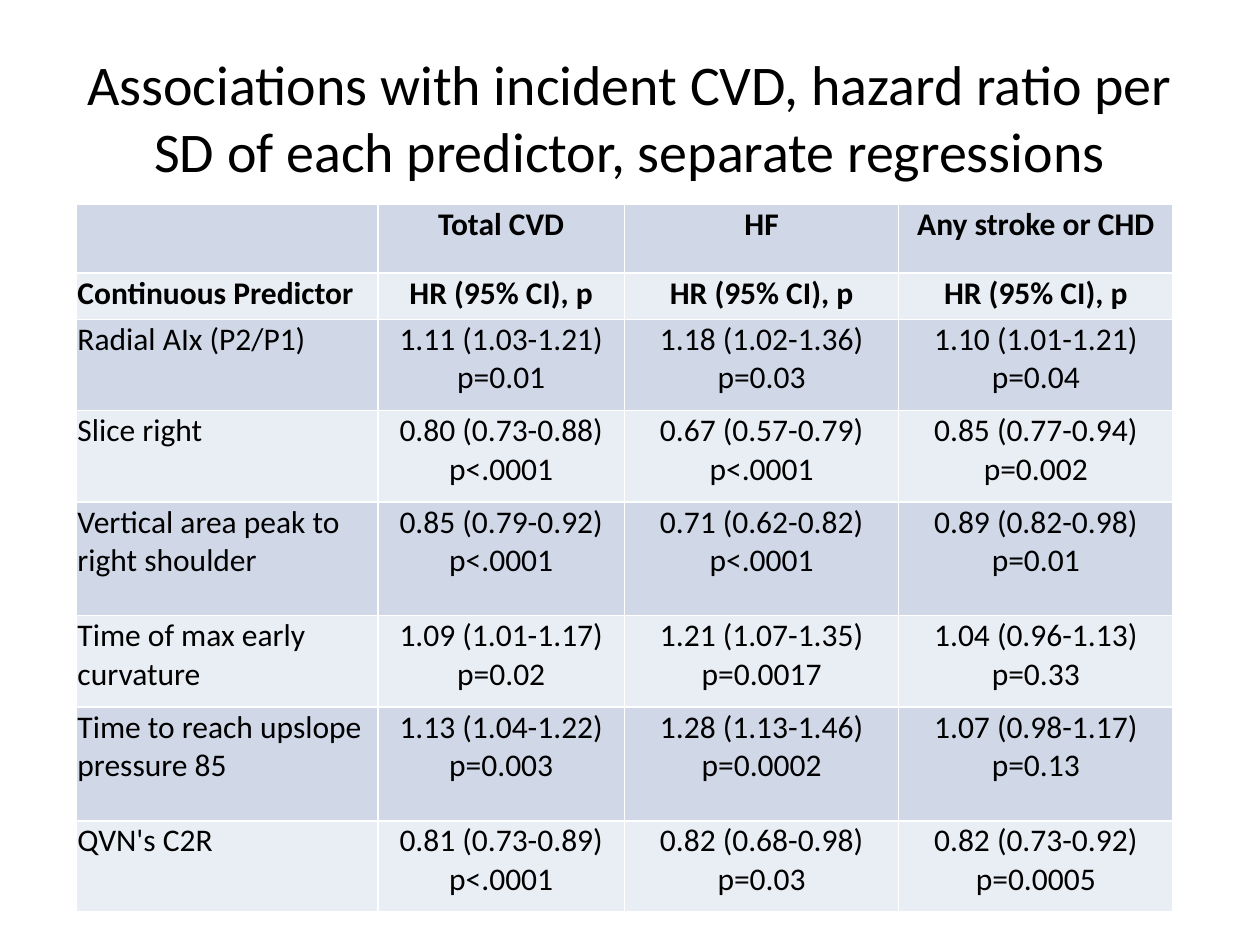
from lxml import etree
from pptx import Presentation
from pptx import util as u
from pptx.dml.color import RGBColor
from pptx.enum import text
from pptx.oxml import ns


def color(value):
    return RGBColor.from_string(value)


def write(frame, words, align, size, bold=False):
    frame.text = words
    for para in frame.paragraphs:
        para.alignment = align
        for span in para.runs:
            look = {"name": "Calibri", "size": u.Pt(size), "bold": bold}
            for key, value in look.items():
                setattr(span.font, key, value)
            span.font.color.rgb = color("000000")


deck = Presentation()
deck.slide_width, deck.slide_height = u.Pt(720), u.Pt(540)
page = deck.slides.add_slide(deck.slide_layouts[6])

title = page.shapes.add_textbox(u.Pt(36), u.Pt(21.6), u.Pt(648), u.Pt(90))
title.text_frame.word_wrap = True
title.text_frame.vertical_anchor = text.MSO_ANCHOR.MIDDLE
write(title.text_frame,
      "Associations with incident CVD, hazard ratio per SD of each predictor, separate regressions",
      text.PP_ALIGN.CENTER, 32)

measure = "HR (95% CI), p"
rows = [
    ["", "Total CVD", "HF", "Any stroke or CHD"],
    ["Continuous Predictor", measure, measure, measure],
    ["Radial AIx (P2/P1)", "1.11 (1.03-1.21)\np=0.01",
     "1.18 (1.02-1.36) p=0.03", "1.10 (1.01-1.21) p=0.04"],
    ["Slice right", "0.80 (0.73-0.88) p<.0001",
     "0.67 (0.57-0.79) p<.0001", "0.85 (0.77-0.94) p=0.002"],
    ["Vertical area peak to right shoulder", "0.85 (0.79-0.92) p<.0001",
     "0.71 (0.62-0.82) p<.0001", "0.89 (0.82-0.98) p=0.01"],
    ["Time of max early curvature", "1.09 (1.01-1.17) p=0.02",
     "1.21 (1.07-1.35) p=0.0017", "1.04 (0.96-1.13) p=0.33"],
    ["Time to reach upslope pressure 85", "1.13 (1.04-1.22) p=0.003",
     "1.28 (1.13-1.46) p=0.0002", "1.07 (0.98-1.17) p=0.13"],
    ["QVN's C2R", "0.81 (0.73-0.89) p<.0001",
     "0.82 (0.68-0.98)\np=0.03", "0.82 (0.73-0.92) p=0.0005"],
]
widths = [172.4, 140.9, 156.7, 156.7]
heights = [39.2, 26.4, 52.2, 52.2, 65, 52.2, 65, 52.2]

table = page.shapes.add_table(len(rows), len(widths), u.Pt(43.6), u.Pt(116.9),
                              u.Pt(sum(widths)), u.Pt(sum(heights))).table
table.first_row = table.horz_banding = False
for column, width in zip(table.columns, widths):
    column.width = u.Pt(width)
for line, height in zip(table.rows, heights):
    line.height = u.Pt(height)

margins = {"margin_left": 0.7, "margin_top": 0.7, "margin_right": 0.7, "margin_bottom": 0}
for r, values in enumerate(rows):
    for c, words in enumerate(values):
        cell = table.cell(r, c)
        for key, value in margins.items():
            setattr(cell, key, u.Pt(value))
        align = text.PP_ALIGN.CENTER if c else text.PP_ALIGN.LEFT
        write(cell.text_frame, words, align, 18, bold=r < 2)
        for side in ("lnL", "lnR", "lnT", "lnB"):
            border = etree.SubElement(cell._tc.get_or_add_tcPr(), ns.qn(f"a:{side}"),
                                      w=str(u.Pt(1)))
            fill = etree.SubElement(border, ns.qn("a:solidFill"))
            etree.SubElement(fill, ns.qn("a:srgbClr"), val="FFFFFF")
        cell.fill.solid()
        cell.fill.fore_color.rgb = color("E9EDF4" if r % 2 else "D0D8E8")

deck.save("out.pptx")
